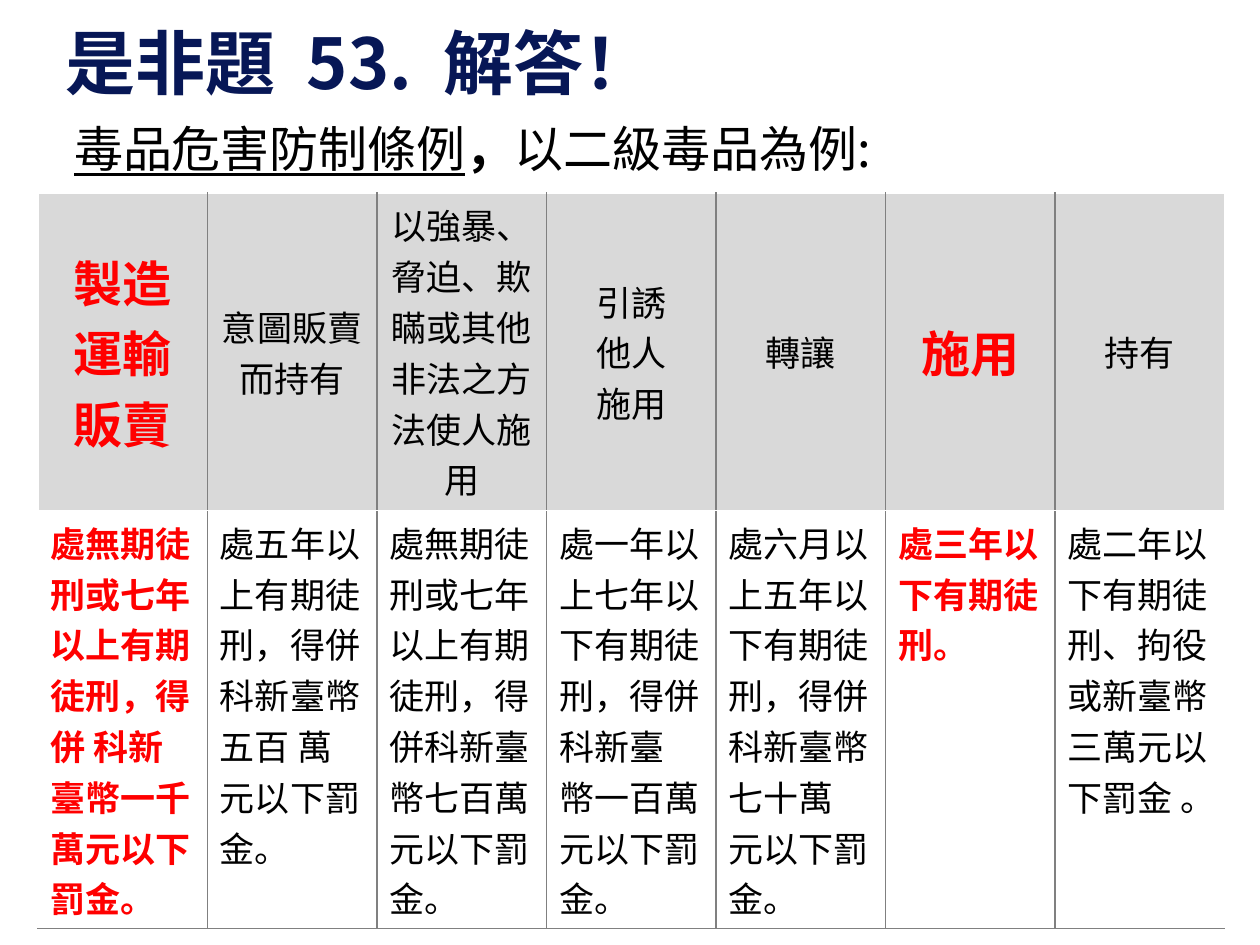
"""Build the quiz answer slide with its table of drug offences and penalties."""
import pptx
import pptx.chart
import pptx.dml.color
import pptx.enum.text
import pptx.oxml
import pptx.oxml.ns
import pptx.util
from pptx.util import Inches

RED, BLACK, NAVY = "FF0000", "000000", "071756"
GREY, WHITE, SILVER = "808080", "FFFFFF", "D9D9D9"


def color(value):
    return pptx.dml.color.RGBColor.from_string(value)


def style(font, name, size, tint, bold=None):
    font.name = name
    font.size = pptx.util.Pt(size)
    font.color.rgb = color(tint)
    font.bold = bold
    east = pptx.oxml.parse_xml(f'<a:ea {pptx.oxml.ns.nsdecls("a")} typeface="{name}"/>')
    font._element.append(east)


deck = pptx.Presentation()
deck.slide_width, deck.slide_height = Inches(10), Inches(7.5)
page = deck.slides.add_slide(deck.slide_layouts[6])

title = page.shapes.add_textbox(Inches(0.42), Inches(-0.14), Inches(9), Inches(1.25))
title.text_frame.word_wrap = True
title.text_frame.vertical_anchor = pptx.enum.text.MSO_ANCHOR.MIDDLE
para = title.text_frame.paragraphs[0]
para.text = "是非題  53.  解答！"
style(para.font, "Noto Sans CJK SC", 40, NAVY, True)

subtitle = page.shapes.add_textbox(Inches(0.49), Inches(0.89), Inches(9.12), Inches(4.49))
subtitle.text_frame.word_wrap = True
para = subtitle.text_frame.paragraphs[0]
style(para.font, "Noto Sans CJK SC", 28, BLACK)
for words, underline, bold in [
    ("毒品危害防制條例", True, False),
    ("，", False, True),
    ("以二級毒品為例:", False, False),
]:
    span = para.add_run()
    span.text = words
    span.font.underline = underline
    span.font.bold = bold

offences = [
    ("製造\n運輸\n販賣", "處無期徒刑或七年以上有期徒刑，得併 科新臺幣一千萬元以下罰金。", True),
    ("意圖販賣\n而持有", "處五年以上有期徒刑，得併科新臺幣五百 萬元以下罰金。", False),
    ("以強暴、脅迫、欺瞞或其他非法之方法使人施用",
     "處無期徒刑或七年以上有期徒刑，得 併科新臺幣七百萬元以下罰金。", False),
    ("引誘\n他人\n施用", "處一年以上七年以下有期徒刑，得併科新臺 幣一百萬元以下罰金。", False),
    ("轉讓", "處六月以上五年以下有期徒刑，得併科新臺幣七十萬 元以下罰金。", False),
    ("施用", "處三年以下有期徒刑。", True),
    ("持有", "處二年以下有期徒刑、拘役或新臺幣三萬元以下罰金 。", False),
]
last = len(offences) - 1
table = page.shapes.add_table(
    2, len(offences), Inches(0.3), Inches(1.53), Inches(9.42), Inches(5.84)
).table
table.first_row = table.horz_banding = False
table.rows[0].height, table.rows[1].height = Inches(2.52), Inches(3.32)

for column, (offence, penalty, key) in enumerate(offences):
    for row, words in enumerate((offence, penalty)):
        header = row == 0
        cell = table.cell(row, column)
        cell.text = words
        cell.fill.solid()
        cell.fill.fore_color.rgb = color(SILVER if header else WHITE)
        if header:
            cell.vertical_anchor = pptx.enum.text.MSO_ANCHOR.MIDDLE
        for para in cell.text_frame.paragraphs:
            if header:
                para.alignment = pptx.enum.text.PP_ALIGN.CENTER
            size = 28 if header and key else 20
            style(para.font, "Noto Sans CJK TC", size, RED if key else BLACK, key)
        borders = {
            "lnL": GREY if column > 0 else WHITE,
            "lnR": GREY if column < last else WHITE,
            "lnT": WHITE,
            "lnB": WHITE if header else GREY,
        }
        for place, (side, tint) in enumerate(borders.items()):
            line = pptx.oxml.parse_xml(
                f'<a:{side} {pptx.oxml.ns.nsdecls("a")} w="12700"><a:solidFill>'
                f'<a:srgbClr val="{tint}"/></a:solidFill></a:{side}>'
            )
            cell._tc.get_or_add_tcPr().insert(place, line)

deck.save("out.pptx")
